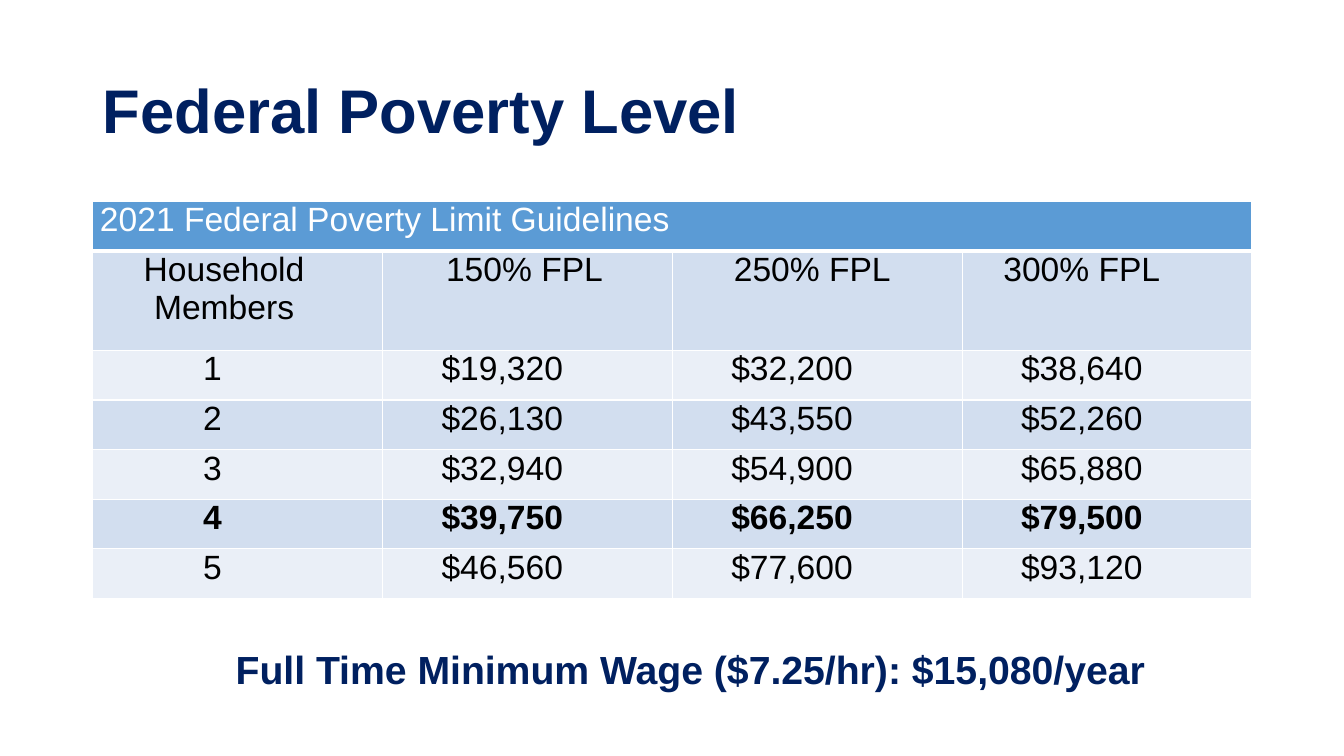
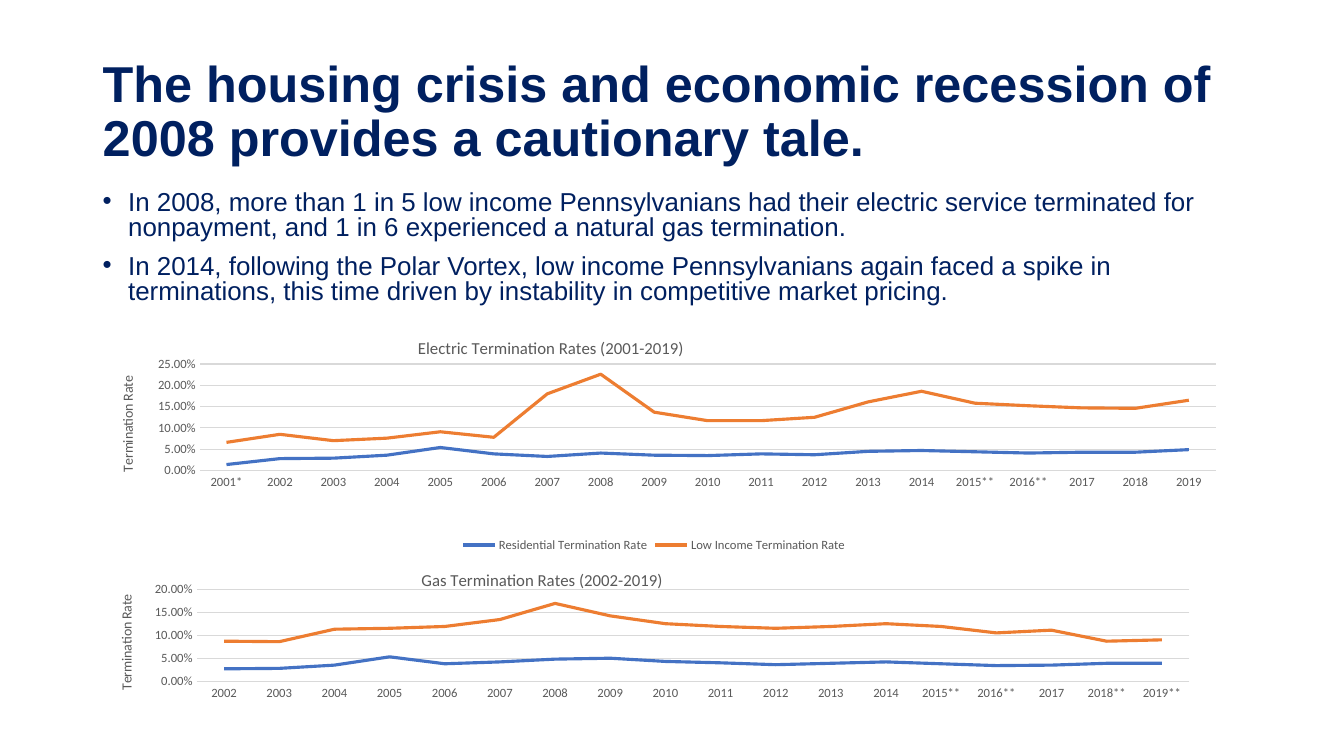
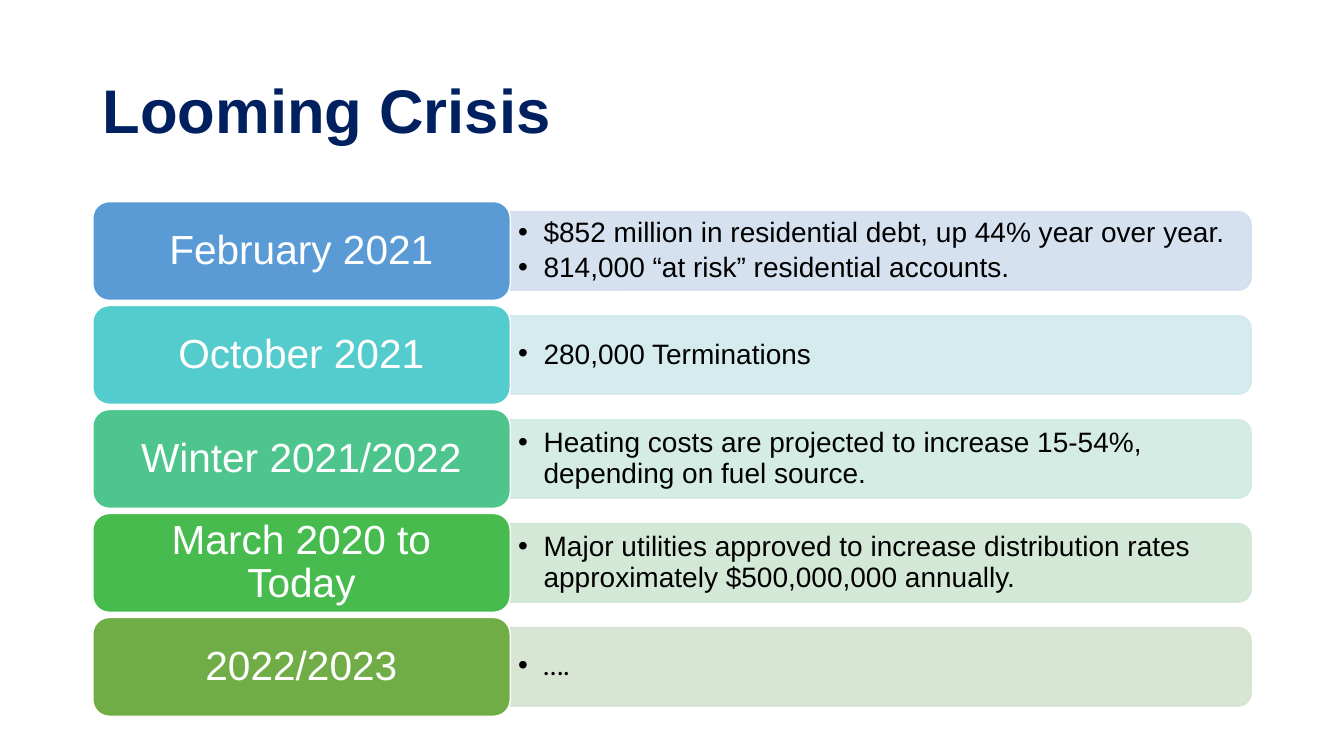
from dataclasses import dataclass
from typing import Optional

from lxml import etree
from pptx import Presentation
from pptx import util as u
from pptx.chart.data import CategoryChartData
from pptx.dml.color import RGBColor
from pptx.enum import chart as ch, shapes, text
from pptx.oxml.ns import qn

Cm, Pt = u.Cm, u.Pt

# Shared style
FONT, CHART_FONT = "Arial", "Calibri"
NAVY, WHITE, BLACK = "002060", "FFFFFF", "000000"
GREY, GRID = "595959", "D9D9D9"
HEADER, BAND_DARK, BAND_LIGHT = "5B9BD5", "D2DEEF", "EAEFF7"
LEFT, WIDTH, CONTENT_TOP = 2.34, 29.21, 5.08
CENTER, JUSTIFY = text.PP_ALIGN.CENTER, text.PP_ALIGN.JUSTIFY
MIDDLE = text.MSO_ANCHOR.MIDDLE


@dataclass
class LineSeries:
    name: str
    color: str
    values: list[float]


@dataclass
class TrendChart:
    title: str
    box: tuple[float, float, float, float]
    maximum: float
    categories: list[str]
    series: list[LineSeries]
    title_at: tuple[float, float]
    axis_title_at: tuple[float, float]
    plot: tuple[float, float, float, float]
    legend: bool


@dataclass
class Milestone:
    label: str
    color: str
    tint: str
    points: list[str]
    font: str = FONT


# Helpers
def rgb(color: str) -> RGBColor:
    return RGBColor.from_string(color)


def set_font(font, size: float, color: str, name: str = FONT, bold: bool = False) -> None:
    font.size, font.name, font.bold = Pt(size), name, bold
    font.color.rgb = rgb(color)


def add_text(tf, content: str, *, size: float, color: str = BLACK, name: str = FONT,
             bold: bool = False, align=None, spacing: Optional[float] = None,
             before: float = 0, after: float = 0, bullet: bool = False) -> None:
    p = tf.add_paragraph() if tf.text else tf.paragraphs[0]
    p.space_before, p.space_after = Pt(before), Pt(after)
    if align is not None:
        p.alignment = align
    if spacing:
        p.line_spacing = spacing
    if bullet:
        pPr = p._p.get_or_add_pPr()
        pPr.set("marL", str(Cm(0.64)))
        pPr.set("indent", str(-Cm(0.64)))
        etree.SubElement(pPr, qn("a:buFont")).set("typeface", FONT)
        etree.SubElement(pPr, qn("a:buChar")).set("char", "•")
    r = p.add_run()
    r.text = content
    set_font(r.font, size, color, name, bold)


def set_frame(tf, dx: float, dy: float, anchor=text.MSO_ANCHOR.TOP):
    tf.word_wrap = True
    tf.vertical_anchor = anchor
    tf.margin_left = tf.margin_right = Cm(dx)
    tf.margin_top = tf.margin_bottom = Cm(dy)
    return tf


def add_box(slide, x: float, y: float, w: float, h: float,
            dx: float = 0.25, dy: float = 0.13, anchor=text.MSO_ANCHOR.TOP):
    sp = slide.shapes.add_textbox(Cm(x), Cm(y), Cm(w), Cm(h))
    return set_frame(sp.text_frame, dx, dy, anchor)


def add_shape(slide, kind, x: float, y: float, w: float, h: float, fill: str, line: str):
    sp = slide.shapes.add_shape(kind, Cm(x), Cm(y), Cm(w), Cm(h))
    sp.shadow.inherit = False
    sp.fill.solid()
    sp.fill.fore_color.rgb = rgb(fill)
    sp.line.color.rgb = rgb(line)
    sp.line.width = Pt(1)
    return sp


def add_slide(prs, title: str, size: float = 44):
    slide = prs.slides.add_slide(prs.slide_layouts[6])
    tf = add_box(slide, LEFT, 1.02, WIDTH, 3.68, anchor=MIDDLE)
    add_text(tf, title, size=size, color=NAVY, bold=True, spacing=0.9)
    return slide


# Table
def set_borders(cell, bottom: float) -> None:
    tcPr = cell._tc.get_or_add_tcPr()
    for i, side in enumerate("LRTB"):
        ln = etree.Element(qn(f"a:ln{side}"), w=str(Pt(bottom if side == "B" else 1)))
        fill = etree.SubElement(ln, qn("a:solidFill"))
        etree.SubElement(fill, qn("a:srgbClr")).set("val", WHITE)
        tcPr.insert(i, ln)


def add_poverty_table(slide, heading: str, rows: list[list[str]], bold_row: int) -> None:
    row_h = 1.25
    head_margins = [0.87, 0.33, 0.43, 1.45]
    frame = slide.shapes.add_table(len(rows) + 1, 4, Cm(LEFT), Cm(CONTENT_TOP),
                                   Cm(WIDTH), Cm(row_h * (len(rows) + 2)))
    table = frame.table
    for column in table.columns:
        column.width = Cm(WIDTH / 4)
    for i, row in enumerate([[heading, "", "", ""]] + rows):
        table.rows[i].height = Cm(row_h * (2 if i == 1 else 1))
        for j, value in enumerate(row):
            cell = table.cell(i, j)
            cell.margin_left, cell.margin_top, cell.margin_bottom = Cm(0.18), 0, 0
            cell.margin_right = Cm(0.18 if i == 0 else head_margins[j] if i == 1 else 1.45)
            cell.fill.solid()
            cell.fill.fore_color.rgb = rgb(
                HEADER if i == 0 else BAND_DARK if i % 2 else BAND_LIGHT)
            set_borders(cell, 3 if i == 0 else 1)
            if value:
                add_text(cell.text_frame, value, size=24, before=5, after=5,
                         color=BLACK if i else WHITE, bold=i == bold_row,
                         align=CENTER if i else JUSTIFY)
    table.cell(0, 0).merge(table.cell(0, 3))


# Charts
def set_layout(parent, index: int, inner: bool = False, **edges: float) -> None:
    for old in parent.findall(qn("c:layout")):
        parent.remove(old)
    layout = etree.Element(qn("c:layout"))
    manual = etree.SubElement(layout, qn("c:manualLayout"))
    if inner:
        etree.SubElement(manual, qn("c:layoutTarget")).set("val", "inner")
    for key in "xy":
        etree.SubElement(manual, qn(f"c:{key}Mode")).set("val", "edge")
    for key, value in edges.items():
        etree.SubElement(manual, qn(f"c:{key}")).set("val", str(value))
    parent.insert(index, layout)


def set_chart_title(title, content: str, size: float, at: tuple[float, float]) -> None:
    add_text(title.text_frame, content, size=size, color=GREY, name=CHART_FONT)
    set_layout(title._element, 1, x=at[0], y=at[1])


def add_trend_chart(slide, trend: TrendChart) -> None:
    data = CategoryChartData(number_format="0.00%")
    data.categories = trend.categories
    for s in trend.series:
        data.add_series(s.name, s.values)
    chart = slide.shapes.add_chart(ch.XL_CHART_TYPE.LINE,
                                   *[Cm(v) for v in trend.box], data).chart
    set_font(chart.font, 10, BLACK, CHART_FONT)
    chart.has_title = True
    set_chart_title(chart.chart_title, trend.title, 12, trend.title_at)
    set_layout(chart._chartSpace.chart.plotArea, 0, inner=True, **dict(zip("xywh", trend.plot)))

    for axis in (chart.category_axis, chart.value_axis):
        axis.major_tick_mark = axis.minor_tick_mark = ch.XL_TICK_MARK.NONE
        set_font(axis.tick_labels.font, 9, GREY, CHART_FONT)
    for line in (chart.category_axis.format.line, chart.value_axis.major_gridlines.format.line):
        line.color.rgb = rgb(GRID)
        line.width = Pt(0.75)
    rates = chart.value_axis
    rates.format.line.fill.background()
    rates.minimum_scale, rates.maximum_scale, rates.major_unit = 0, trend.maximum, 0.05
    rates.tick_labels.number_format = "0.00%"
    rates.tick_labels.number_format_is_linked = False
    rates.has_title = True
    set_chart_title(rates.axis_title, "Termination Rate", 10, trend.axis_title_at)

    chart.plots[0].vary_by_categories = False
    for series, s in zip(chart.plots[0].series, trend.series):
        series.smooth = False
        series.marker.style = ch.XL_MARKER_STYLE.NONE
        series.format.line.color.rgb = rgb(s.color)
        series.format.line.width = Pt(2.25)
    chart.has_legend = trend.legend
    if trend.legend:
        chart.legend.position = ch.XL_LEGEND_POSITION.BOTTOM
        chart.legend.include_in_layout = False
        set_font(chart.legend.font, 9, GREY, CHART_FONT)


def rate_series(residential: list[float], low_income: list[float]) -> list[LineSeries]:
    """Turn percentages into the two series of a termination chart."""
    return [LineSeries(f"{name} Termination Rate", color, [round(v / 100, 4) for v in values])
            for name, color, values in (("Residential", "4472C4", residential),
                                        ("Low Income", "ED7D31", low_income))]


def year_labels(first: int, starred: dict[int, str]) -> list[str]:
    return [f"{year}{starred.get(year, '')}" for year in range(first, 2020)]


# Timeline
def add_milestone(slide, m: Milestone, y: float) -> None:
    label_w, label_h, bar_h, text_h = 10.52, 2.49, 1.98, 1.8
    bar_x, mid = LEFT + label_w, y + label_h / 2
    bar_w = 31.53 - bar_x
    bar = add_shape(slide, shapes.MSO_SHAPE.ROUND_2_SAME_RECTANGLE,
                    bar_x + (bar_w - bar_h) / 2, mid - bar_w / 2, bar_h, bar_w,
                    m.tint, m.tint)
    bar.rotation = 90
    for clr in bar._element.spPr.iter(qn("a:srgbClr")):
        etree.SubElement(clr, qn("a:alpha")).set("val", "90000")
    tf = add_box(slide, bar_x, mid - text_h / 2, bar_w - 0.1, text_h, 0.2, 0.1, MIDDLE)
    for point in m.points:
        add_text(tf, point, size=20, name=m.font, spacing=0.9, after=3, bullet=True)
    label = add_shape(slide, shapes.MSO_SHAPE.ROUNDED_RECTANGLE,
                      LEFT, y, label_w, label_h, m.color, WHITE)
    tf = set_frame(label.text_frame, 0.4, 0.27, MIDDLE)
    add_text(tf, m.label, size=29, color=WHITE, align=CENTER, spacing=0.9)


# Content
POVERTY_ROWS = [
    ["Household Members", "150% FPL", "250% FPL", "300% FPL"],
    ["1", "$19,320", "$32,200", "$38,640"],
    ["2", "$26,130", "$43,550", "$52,260"],
    ["3", "$32,940", "$54,900", "$65,880"],
    ["4", "$39,750", "$66,250", "$79,500"],
    ["5", "$46,560", "$77,600", "$93,120"],
]
RECESSION_POINTS = [
    "In 2008, more than 1 in 5 low income Pennsylvanians had their electric service "
    "terminated for nonpayment, and 1 in 6 experienced a natural gas termination.",
    "In 2014, following the Polar Vortex, low income Pennsylvanians again faced a spike in "
    "terminations, this time driven by instability in competitive market pricing.",
]
TRENDS = [
    TrendChart(
        "Electric Termination Rates (2001-2019)", (1.42, 8.18, 30.12, 5.84), 0.25,
        year_labels(2001, {2001: "*", 2015: "**", 2016: "**"}),
        rate_series([1.4, 2.8, 2.9, 3.6, 5.4, 3.9, 3.3, 4.1, 3.6, 3.5,
                     3.9, 3.7, 4.5, 4.7, 4.4, 4.1, 4.3, 4.3, 4.9],
                    [6.6, 8.5, 7, 7.6, 9.1, 7.8, 18, 22.6, 13.7, 11.7,
                     11.7, 12.5, 16.1, 18.6, 15.8, 15.2, 14.7, 14.6, 16.5]),
        (0.3, 0.04), (0.05, 0.21), (0.12, 0.17, 0.85, 0.46), True),
    TrendChart(
        "Gas Termination Rates (2002-2019)", (1.42, 14, 29.44, 5.05), 0.2,
        year_labels(2002, {year: "**" for year in (2015, 2016, 2018, 2019)}),
        rate_series([2.8, 2.9, 3.6, 5.4, 3.9, 4.3, 4.9, 5.1, 4.4,
                     4.1, 3.7, 4, 4.3, 3.9, 3.5, 3.6, 4, 4],
                    [8.8, 8.7, 11.4, 11.6, 12, 13.5, 17, 14.3, 12.6,
                     12, 11.6, 12, 12.6, 12, 10.6, 11.2, 8.8, 9.1]),
        (0.31, 0.05), (0.05, 0.18), (0.12, 0.17, 0.85, 0.46), False),
]
MILESTONES = [
    Milestone("February 2021", "5B9BD5", "D2DEEF",
              ["$852 million in residential debt, up 44% year over year.",
               "814,000 “at risk” residential accounts."]),
    Milestone("October 2021", "54CCCD", "D1E9ED", ["280,000 Terminations"]),
    Milestone("Winter 2021/2022", "4DC58D", "D0EAE1",
              ["Heating costs are projected to increase 15-54%, depending on fuel source."]),
    Milestone("March 2020 to Today", "48BB4F", "D0E6D4",
              ["Major utilities approved to increase distribution rates "
               "approximately $500,000,000 annually."]),
    Milestone("2022/2023", "70AD47", "D5E3CF", ["…."], CHART_FONT),
]


def main() -> None:
    prs = Presentation()
    prs.slide_width, prs.slide_height = Cm(33.87), Cm(19.05)

    # Poverty level table
    slide = add_slide(prs, "Federal Poverty Level")
    add_poverty_table(slide, "2021 Federal Poverty Limit Guidelines", POVERTY_ROWS, bold_row=5)
    add_text(add_box(slide, 5.69, 16.13, 25.2, 1.45),
             "Full Time Minimum Wage ($7.25/hr): $15,080/year", size=28, color=NAVY, bold=True)

    # Termination rates
    slide = add_slide(prs, "The housing crisis and economic recession of 2008 "
                           "provides a cautionary tale.", 36)
    tf = add_box(slide, LEFT, 4.7, WIDTH, 3.23)
    for point in RECESSION_POINTS:
        add_text(tf, point, size=18.5, color=NAVY, spacing=0.8, before=10, bullet=True)
    for trend in TRENDS:
        add_trend_chart(slide, trend)

    # Crisis timeline
    slide = add_slide(prs, "Looming Crisis")
    for i, milestone in enumerate(MILESTONES):
        add_milestone(slide, milestone, CONTENT_TOP + i * 2.62)

    prs.save("out.pptx")


if __name__ == "__main__":
    main()
